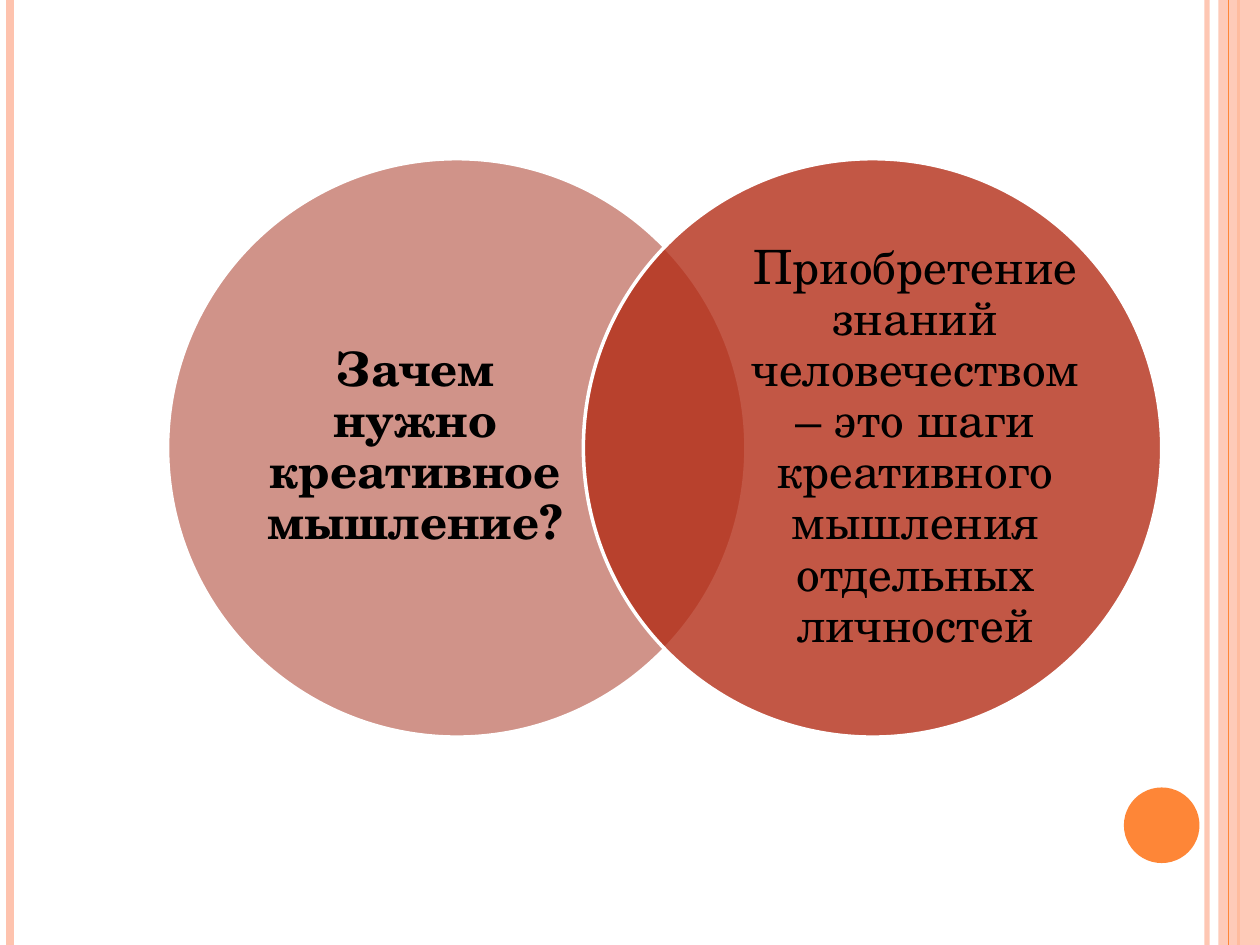
from lxml import etree
from pptx import Presentation
from pptx.dml.color import RGBColor
from pptx.enum import shapes, text
from pptx.oxml.ns import qn
from pptx.util import Inches, Pt

PINK = RGBColor(0xFE, 0xC3, 0xAE)
ORANGE = RGBColor(0xFE, 0x86, 0x37)
ROSE = RGBColor(0xA2, 0x28, 0x14)
BRICK = RGBColor(0xB3, 0x2D, 0x17)
WHITE = RGBColor(0xFF, 0xFF, 0xFF)
BLACK = RGBColor(0, 0, 0)
FONT = "TeX Gyre Schola"
HIGH = 7.5
RECT = shapes.MSO_SHAPE.RECTANGLE
OVAL = shapes.MSO_SHAPE.OVAL


def fade(fill, alpha):
    """Set the opacity of a solid fill, in percent."""
    color = fill._xPr.find(qn("a:solidFill"))[0]
    etree.SubElement(color, qn("a:alpha"), val=str(alpha * 1000))


def add_rule(slide, x, color, width, alpha=100):
    """Draw a line down the full height of the slide."""
    rule = slide.shapes.add_connector(
        shapes.MSO_CONNECTOR.STRAIGHT, Inches(x), 0, Inches(x), Inches(HIGH))
    rule.line.color.rgb = color
    rule.line.width = Pt(width)
    if alpha < 100:
        fade(rule.line.fill, alpha)
    etree.SubElement(rule._element.spPr, qn("a:effectLst"))


def add_area(slide, kind, box, color, alpha=100, edge=None):
    area = slide.shapes.add_shape(kind, *map(Inches, box))
    area.shadow.inherit = False
    area.fill.solid()
    area.fill.fore_color.rgb = color
    if alpha < 100:
        fade(area.fill, alpha)
    if edge:
        area.line.color.rgb = edge
        area.line.width = Pt(2)
    else:
        area.line.fill.background()


def add_label(slide, left, words, bold):
    box = slide.shapes.add_textbox(*map(Inches, (left, 1.8, 2.65, 3.51)))
    frame = box.text_frame
    form = dict(word_wrap=True, vertical_anchor=text.MSO_ANCHOR.MIDDLE,
                margin_left=0, margin_top=0, margin_right=0, margin_bottom=0)
    for key, value in form.items():
        setattr(frame, key, value)
    para = frame.paragraphs[0]
    para.alignment = text.PP_ALIGN.CENTER
    para.line_spacing = 0.9
    run = para.add_run()
    run.text = words
    for key, value in dict(name=FONT, size=Pt(27), bold=bold).items():
        setattr(run.font, key, value)
    run.font.color.rgb = BLACK


def add_frame(slide):
    """Draw the side stripes and the dot of the slide's design."""
    add_rule(slide, 9.58, PINK, 3, 93)
    add_rule(slide, 0.08, PINK, 4.5)
    add_rule(slide, 9.83, ORANGE, 1.5)
    add_area(slide, RECT, (9.67, 0, 0.33, HIGH), PINK, 87)
    add_rule(slide, 9.75, ORANGE, 0.75)
    add_area(slide, OVAL, (8.92, 6.25, 0.6, 0.6), ORANGE)


def main():
    deck = Presentation()
    deck.slide_width, deck.slide_height = Inches(10), Inches(HIGH)
    slide = deck.slides.add_slide(deck.slide_layouts[6])
    add_frame(slide)
    circles = [
        (1.33, ROSE, 50, 1.97, True, "Зачем нужно креативное мышление?"),
        (4.63, BRICK, 80, 5.94, False,
         "Приобретение знаний человечеством – это шаги "
         "креативного мышления отдельных личностей"),
    ]
    for left, color, alpha, start, bold, words in circles:
        add_area(slide, OVAL, (left, 1.26, 4.59, 4.59), color, alpha, WHITE)
        add_label(slide, start, words, bold)
    deck.save("out.pptx")


if __name__ == "__main__":
    main()
